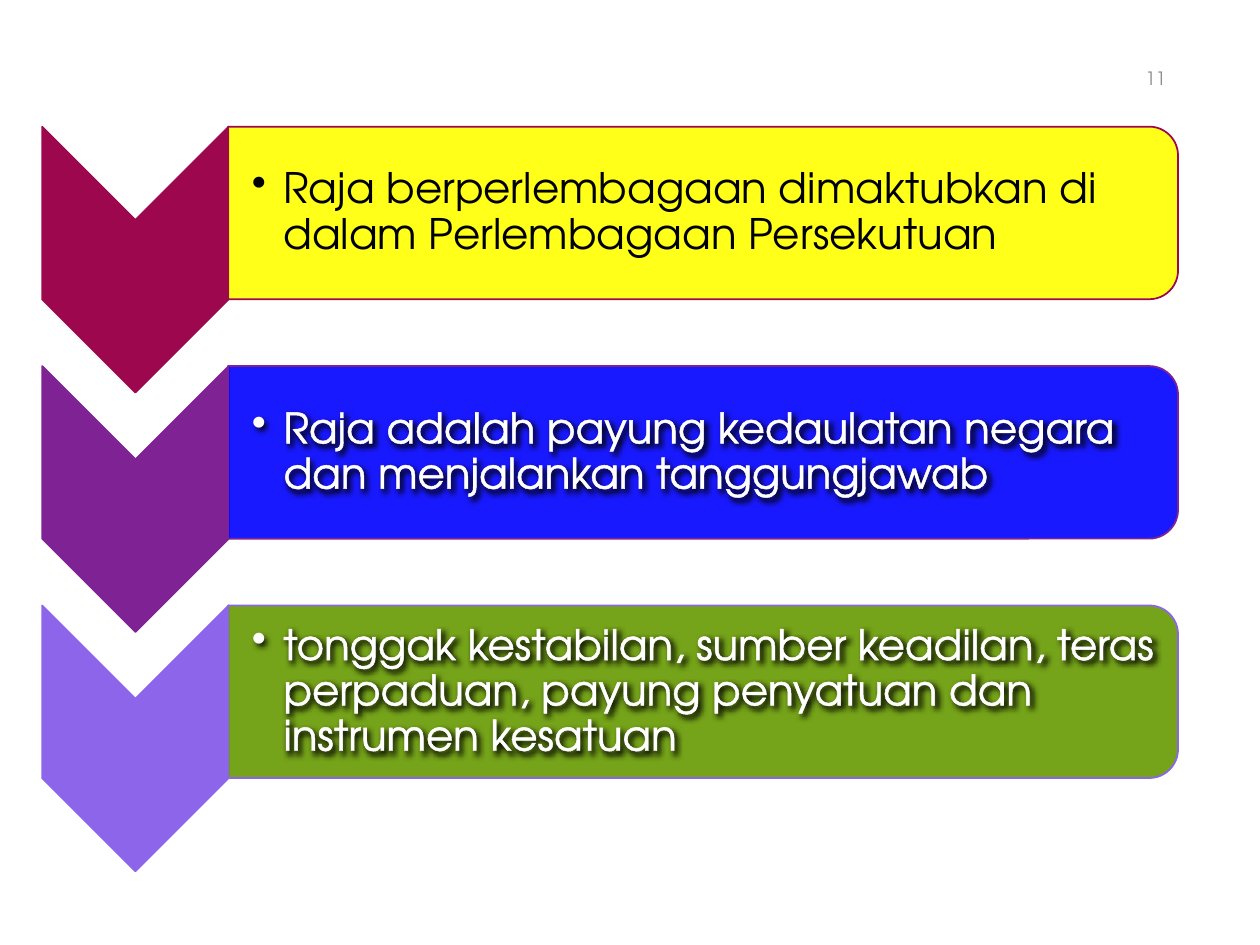
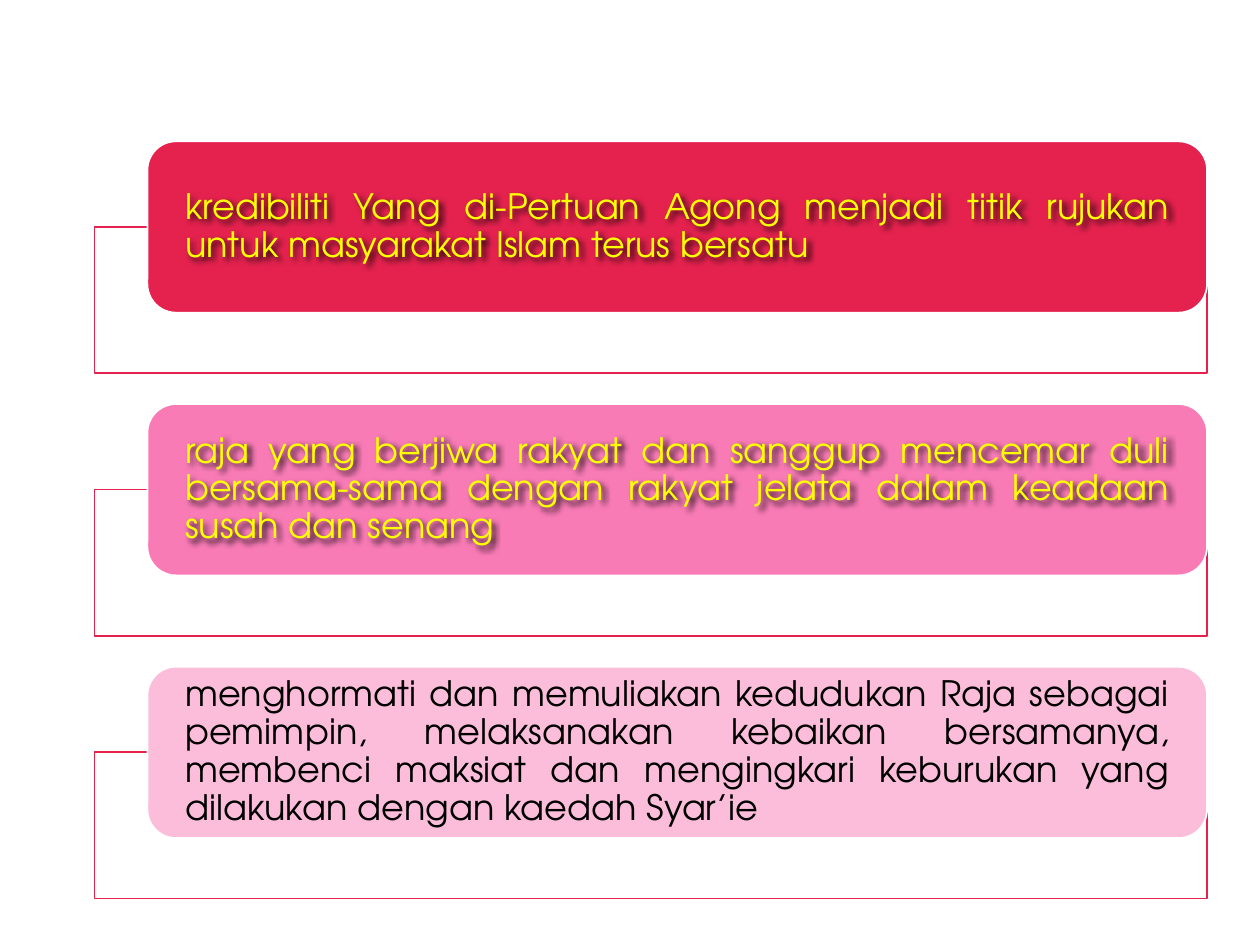
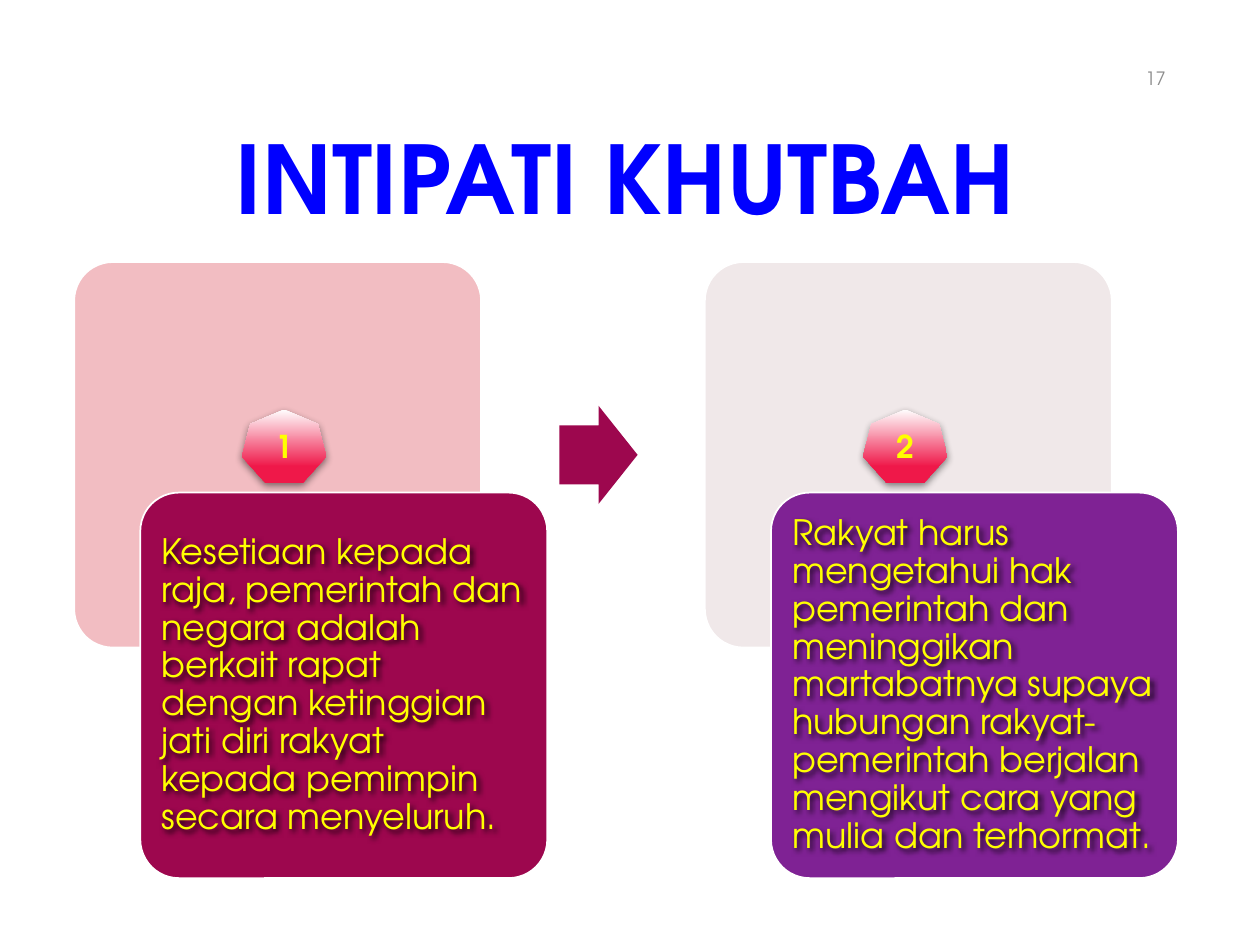
"""Build three sermon slides: chevron list, framed cards and a two-step summary."""
from lxml.etree import SubElement
from pptx import Presentation
from pptx.dml.color import RGBColor
from pptx.enum.shapes import MSO_SHAPE
from pptx.enum.text import MSO_ANCHOR, PP_ALIGN
from pptx.oxml.ns import qn
from pptx.util import Pt

FONT = "TeX Gyre Adventor"
WHITE = RGBColor(0xFF, 0xFF, 0xFF)
BLACK = RGBColor(0x00, 0x00, 0x00)
GREY = RGBColor(0x8C, 0x8C, 0x8C)
YELLOW = RGBColor(0xFF, 0xFF, 0x00)
BLUE = RGBColor(0x00, 0x00, 0xFF)
GREEN = RGBColor(0x66, 0x99, 0x00)
MAROON = RGBColor(0x9D, 0x07, 0x4E)
PURPLE = RGBColor(0x7F, 0x22, 0x94)
LILAC = RGBColor(0x8D, 0x65, 0xEA)
CRIMSON = RGBColor(0xE5, 0x22, 0x4E)
PINK = RGBColor(0xF9, 0x7B, 0xB6)
PALE_PINK = RGBColor(0xFC, 0xBD, 0xDB)
ROSE = RGBColor(0xF2, 0xBD, 0xC2)
MIST = RGBColor(0xF0, 0xE8, 0xE9)
BADGE_RED = RGBColor(0xEF, 0x18, 0x49)

TEXT_SHADOW = dict(blur=3, distance=2, angle=45, alpha=85)
BADGE_SHADOW = dict(blur=4.5, distance=1.5, angle=90, alpha=48)

ROLES = [
    ("Raja berperlembagaan dimaktubkan di dalam Perlembagaan Persekutuan",
     MAROON, YELLOW, BLACK),
    ("Raja adalah payung kedaulatan negara dan menjalankan tanggungjawab",
     PURPLE, BLUE, WHITE),
    ("tonggak kestabilan, sumber keadilan, teras perpaduan, payung penyatuan "
     "dan instrumen kesatuan", LILAC, GREEN, WHITE),
]
VIRTUES = [
    ("kredibiliti Yang di-Pertuan Agong menjadi titik rujukan untuk masyarakat "
     "Islam terus bersatu", CRIMSON, YELLOW),
    ("raja yang berjiwa rakyat dan sanggup mencemar duli bersama-sama dengan "
     "rakyat jelata dalam keadaan susah dan senang", PINK, YELLOW),
    ("menghormati dan memuliakan kedudukan Raja sebagai pemimpin, melaksanakan "
     "kebaikan bersamanya, membenci maksiat dan mengingkari keburukan yang "
     "dilakukan dengan kaedah Syar’ie", PALE_PINK, BLACK),
]
SUMMARY_TITLE = "INTIPATI KHUTBAH"
SUMMARY = [
    ("Kesetiaan kepada raja, pemerintah dan negara adalah berkait rapat dengan "
     "ketinggian jati diri rakyat kepada pemimpin secara menyeluruh.",
     ROSE, MAROON),
    ("Rakyat harus mengetahui hak pemerintah dan meninggikan martabatnya supaya "
     "hubungan rakyat-pemerintah berjalan mengikut cara yang mulia dan terhormat.",
     MIST, PURPLE),
]
BADGES = [("1", 138.24), ("2", 493.2)]

ROLE_PITCH = 136.8
VIRTUE_PITCH = 150.12
SUMMARY_PITCH = 360.4


def add_effects(shape, blur, distance, angle, alpha):
    effects = shape._element.spPr.find(qn("a:effectLst"))
    if effects is None:
        effects = SubElement(shape._element.spPr, qn("a:effectLst"))
    shadow = SubElement(effects, qn("a:outerShdw"), blurRad=str(Pt(blur)),
                        dist=str(Pt(distance)), dir=str(angle * 60000),
                        algn="ctr", rotWithShape="0")
    color = SubElement(shadow, qn("a:srgbClr"), val=str(BLACK))
    SubElement(color, qn("a:alpha"), val=str(alpha * 1000))


def add_outline(run, color, width):
    properties = run._r.get_or_add_rPr()
    line = SubElement(properties, qn("a:ln"), w=str(Pt(width)))
    fill = SubElement(line, qn("a:solidFill"))
    SubElement(fill, qn("a:srgbClr"), val=str(color))
    properties.insert(0, line)


def add_block(slide, kind, box, fill=None, line=None, alpha=None, adjustments=()):
    shape = slide.shapes.add_shape(kind, *map(Pt, box))
    shape.shadow.inherit = False
    for index, value in enumerate(adjustments):
        shape.adjustments[index] = value
    if fill is not None:
        shape.fill.solid()
        shape.fill.fore_color.rgb = fill
    if alpha:
        color = shape._element.spPr.find(qn("a:solidFill"))[0]
        SubElement(color, qn("a:alpha"), val=str(alpha * 1000))
    if line is None:
        shape.line.fill.background()
    else:
        shape.line.color.rgb = line
        shape.line.width = Pt(1)
    return shape


def add_turned_block(slide, kind, box, **style):
    left, top, width, height = box
    shift = (width - height) / 2
    shape = add_block(slide, kind, (left + shift, top - shift, height, width), **style)
    shape.rotation = 90
    return shape


def write(shape, text, size, color, align=PP_ALIGN.LEFT, insets=(7.2, 3.6, 7.2, 3.6),
          anchor=MSO_ANCHOR.MIDDLE, wrap=True, bold=False, bullet=False,
          spacing=None, after=None, outline=None):
    frame = shape.text_frame
    frame.word_wrap = wrap
    frame.vertical_anchor = anchor
    (frame.margin_left, frame.margin_top,
     frame.margin_right, frame.margin_bottom) = map(Pt, insets)
    paragraph = frame.paragraphs[0]
    if bullet:
        properties = paragraph._p.get_or_add_pPr()
        properties.set("marL", str(Pt(18)))
        properties.set("indent", str(Pt(-18)))
        SubElement(properties, qn("a:buChar"), char="•")
    paragraph.alignment = align
    if spacing:
        paragraph.line_spacing = spacing
        paragraph.space_after = Pt(after)
    run = paragraph.add_run()
    run.text = text
    run.font.name = FONT
    run.font.size = Pt(size)
    run.font.bold = bold
    run.font.color.rgb = color
    if outline:
        add_outline(run, *outline)


def add_text(slide, box, text, size, color, shadowed=False, **style):
    textbox = slide.shapes.add_textbox(*map(Pt, box))
    write(textbox, text, size, color, **style)
    if shadowed:
        add_effects(textbox, **TEXT_SHADOW)


def add_slide_number(slide, number):
    add_text(slide, (517.68, 30.24, 155.52, 28.8), number, 10.5, GREY,
             align=PP_ALIGN.RIGHT)


def build_roles(slide):
    add_slide_number(slide, "11")
    for index, (text, accent, fill, color) in enumerate(ROLES):
        top = 72.4 + index * ROLE_PITCH
        light = color == WHITE
        add_turned_block(slide, MSO_SHAPE.CHEVRON, (24.1, top, 106.56, 151.92),
                         fill=accent, line=accent)
        add_turned_block(slide, MSO_SHAPE.ROUND_2_SAME_RECTANGLE,
                         (130.3, top, 542.88, 98.64),
                         fill=fill, line=accent, alpha=90)
        add_text(slide, (130.32, top + 4.68, 537.84, 89.28), text, 24, color,
                 shadowed=light, insets=(13.68, 1.44, 1.44, 1.44), bullet=True,
                 spacing=0.9, after=3.6, outline=(WHITE, 0) if light else None)


def build_virtues(slide):
    for index, (text, fill, color) in enumerate(VIRTUES):
        top = 80.8 + index * VIRTUE_PITCH
        light = color == YELLOW
        add_block(slide, MSO_SHAPE.RECTANGLE, (54, top + 48.9, 635.76, 83.52),
                  fill=WHITE, line=CRIMSON, alpha=90)
        add_block(slide, MSO_SHAPE.ROUNDED_RECTANGLE, (84.24, top, 605.52, 97.92),
                  fill=fill, line=WHITE)
        add_text(slide, (89.28, top + 4.9, 595.44, 87.84), text, 20, color,
                 shadowed=light, align=PP_ALIGN.JUSTIFY, insets=(16.56, 0, 16.56, 0),
                 spacing=0.9, after=7, outline=(YELLOW, 0.75) if light else None)


def add_badge(slide, number, left):
    badge = add_block(slide, MSO_SHAPE.HEPTAGON, (left, 234, 48.24, 41.76))
    badge.fill.gradient()
    badge.fill.gradient_angle = 270
    for stop, (position, color) in zip(badge.fill.gradient_stops,
                                       [(0, WHITE), (0.78, BADGE_RED)]):
        stop.position = position
        stop.color.rgb = color
    add_effects(badge, **BADGE_SHADOW)
    write(badge, number, 18, YELLOW, align=PP_ALIGN.CENTER, insets=(0, 0, 0, 0),
          bold=True, outline=(YELLOW, 0.8))


def build_summary(slide):
    add_slide_number(slide, "17")
    for index, (text, back, front) in enumerate(SUMMARY):
        left = 42.4 + index * SUMMARY_PITCH
        for offset, top, fill in [(0, 149.76, back), (37.8, 281.52, front)]:
            add_block(slide, MSO_SHAPE.ROUNDED_RECTANGLE,
                      (left + offset, top, 232.56, 220.32),
                      fill=fill, line=WHITE, adjustments=[0.1])
        add_text(slide, (left + 44.2, 288, 219.6, 207.36), text, 20, YELLOW,
                 shadowed=True, insets=(5.76,) * 4, spacing=0.9, after=7,
                 outline=(YELLOW, 0.75))
    add_block(slide, MSO_SHAPE.RIGHT_ARROW, (319.68, 231.84, 44.64, 56.16),
              fill=MAROON, adjustments=[0.6, 0.5])
    add_text(slide, (121.68, 64.8, 470.88, 72.72), SUMMARY_TITLE, 54, BLUE,
             align=PP_ALIGN.CENTER, anchor=MSO_ANCHOR.TOP, wrap=False, bold=True,
             outline=(MAROON, 0.52))
    for number, left in BADGES:
        add_badge(slide, number, left)


def main():
    presentation = Presentation()
    presentation.slide_width, presentation.slide_height = Pt(720), Pt(540)
    for build in (build_roles, build_virtues, build_summary):
        build(presentation.slides.add_slide(presentation.slide_layouts[6]))
    presentation.save("out.pptx")


if __name__ == "__main__":
    main()
